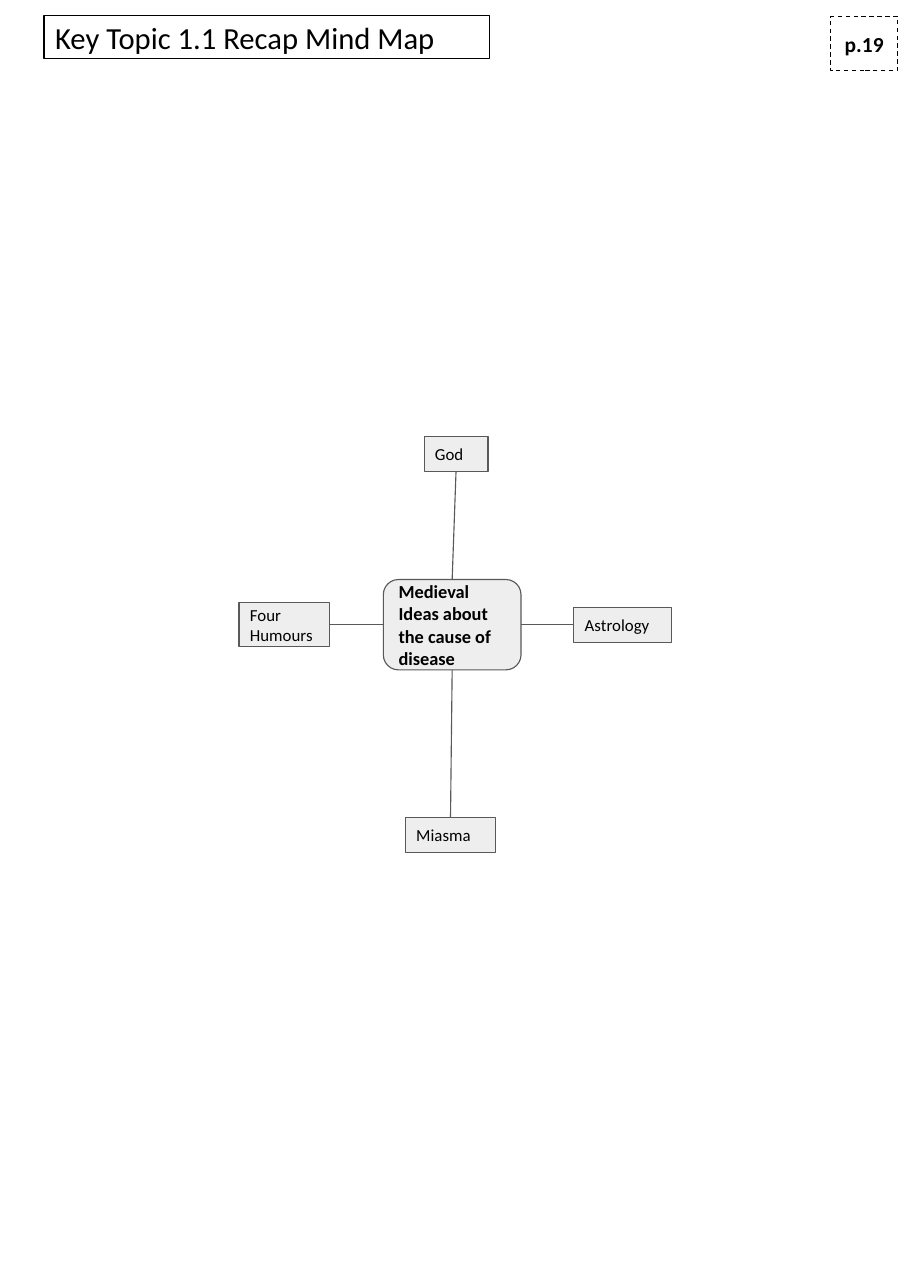
from dataclasses import dataclass

from pptx import Presentation
from pptx.dml.color import RGBColor
from pptx.enum.dml import MSO_LINE
from pptx.enum.shapes import MSO_CONNECTOR, MSO_SHAPE
from pptx.enum.text import MSO_ANCHOR, MSO_AUTO_SIZE, PP_ALIGN
from pptx.oxml.ns import qn
from pptx.util import Inches, Pt
from lxml.etree import SubElement

TOP, LEFT, BOTTOM, RIGHT = range(4)


@dataclass(frozen=True)
class Theme:
    font: str = "Calibri"
    ink: RGBColor = RGBColor(0x00, 0x00, 0x00)
    paper: RGBColor = RGBColor(0xFF, 0xFF, 0xFF)
    node: RGBColor = RGBColor(0xEE, 0xEE, 0xEE)
    branch: RGBColor = RGBColor(0x59, 0x59, 0x59)
    title: int = 20
    page: int = 14
    core: int = 12
    cause: int = 11
    rule: float = 0.75
    inset: float = 0.1


THEME = Theme()


def outline(item, color):
    item.line.color.rgb = color
    item.line.width = Pt(THEME.rule)


def write(shape, text, size, bold=False, align=PP_ALIGN.LEFT):
    frame = shape.text_frame
    frame.word_wrap = True
    frame.auto_size = MSO_AUTO_SIZE.NONE
    frame.vertical_anchor = MSO_ANCHOR.MIDDLE
    frame.margin_left = frame.margin_right = Inches(THEME.inset)
    frame.margin_top = frame.margin_bottom = Inches(THEME.inset)
    paragraph = frame.paragraphs[0]
    paragraph.alignment = align
    run = paragraph.add_run()
    run.text = text
    run.font.name = THEME.font
    run.font.size = Pt(size)
    run.font.bold = bold
    run.font.color.rgb = THEME.ink


def add_box(slide, kind, box, fill, line):
    shape = slide.shapes.add_shape(kind, *map(Inches, box))
    shape.shadow.inherit = False
    shape.fill.solid()
    shape.fill.fore_color.rgb = fill
    outline(shape, line)
    return shape


def add_title(slide, box, text):
    title = slide.shapes.title
    title.left, title.top, title.width, title.height = map(Inches, box)
    outline(title, THEME.ink)
    write(title, text, THEME.title)


def add_page_number(slide, box, text):
    page = add_box(slide, MSO_SHAPE.RECTANGLE, box, THEME.paper, THEME.ink)
    page.line.dash_style = MSO_LINE.DASH
    write(page, text, THEME.page, bold=True, align=PP_ALIGN.CENTER)


def add_branch(slide, cause, cause_side, core, core_side):
    branch = slide.shapes.add_connector(MSO_CONNECTOR.STRAIGHT, 0, 0, 0, 0)
    branch.begin_connect(cause, cause_side)
    branch.end_connect(core, core_side)
    outline(branch, THEME.branch)
    SubElement(branch._element.spPr, qn("a:effectLst"))


def add_mind_map(slide, box, core_text, causes):
    left, top, width, height = box
    core_box = (left + 1.31, top + 1.3, 1.25, 0.82)
    core = add_box(slide, MSO_SHAPE.ROUNDED_RECTANGLE, core_box, THEME.node, THEME.branch)
    write(core, core_text, THEME.core, bold=True)

    middle = core_box[1] + core_box[3] / 2
    for text, side, offset, w, h in causes:
        x, y = {
            TOP: (left + offset, top),
            BOTTOM: (left + offset, top + height - h),
            LEFT: (left, middle - h / 2),
            RIGHT: (left + width - w, middle - h / 2),
        }[side]
        cause = add_box(slide, MSO_SHAPE.RECTANGLE, (x, y, w, h), THEME.node, THEME.branch)
        write(cause, text, THEME.cause)
        add_branch(slide, cause, (side + 2) % 4, core, side)


def main():
    deck = Presentation()
    deck.slide_width, deck.slide_height = Inches(8.27), Inches(11.69)
    slide = deck.slides.add_slide(deck.slide_layouts[5])
    add_title(slide, (0.4, 0.14, 4.04, 0.39), "Key Topic 1.1 Recap Mind Map")
    add_mind_map(
        slide,
        (2.17, 3.96, 3.93, 3.78),
        "Medieval Ideas about the cause of disease",
        [
            ("God", TOP, 1.68, 0.58, 0.32),
            ("Astrology", RIGHT, 0, 0.89, 0.32),
            ("Four Humours", LEFT, 0, 0.82, 0.4),
            ("Miasma", BOTTOM, 1.51, 0.82, 0.32),
        ],
    )
    add_page_number(slide, (7.54, 0.15, 0.61, 0.49), "p.19")
    deck.save("out.pptx")


if __name__ == "__main__":
    main()
